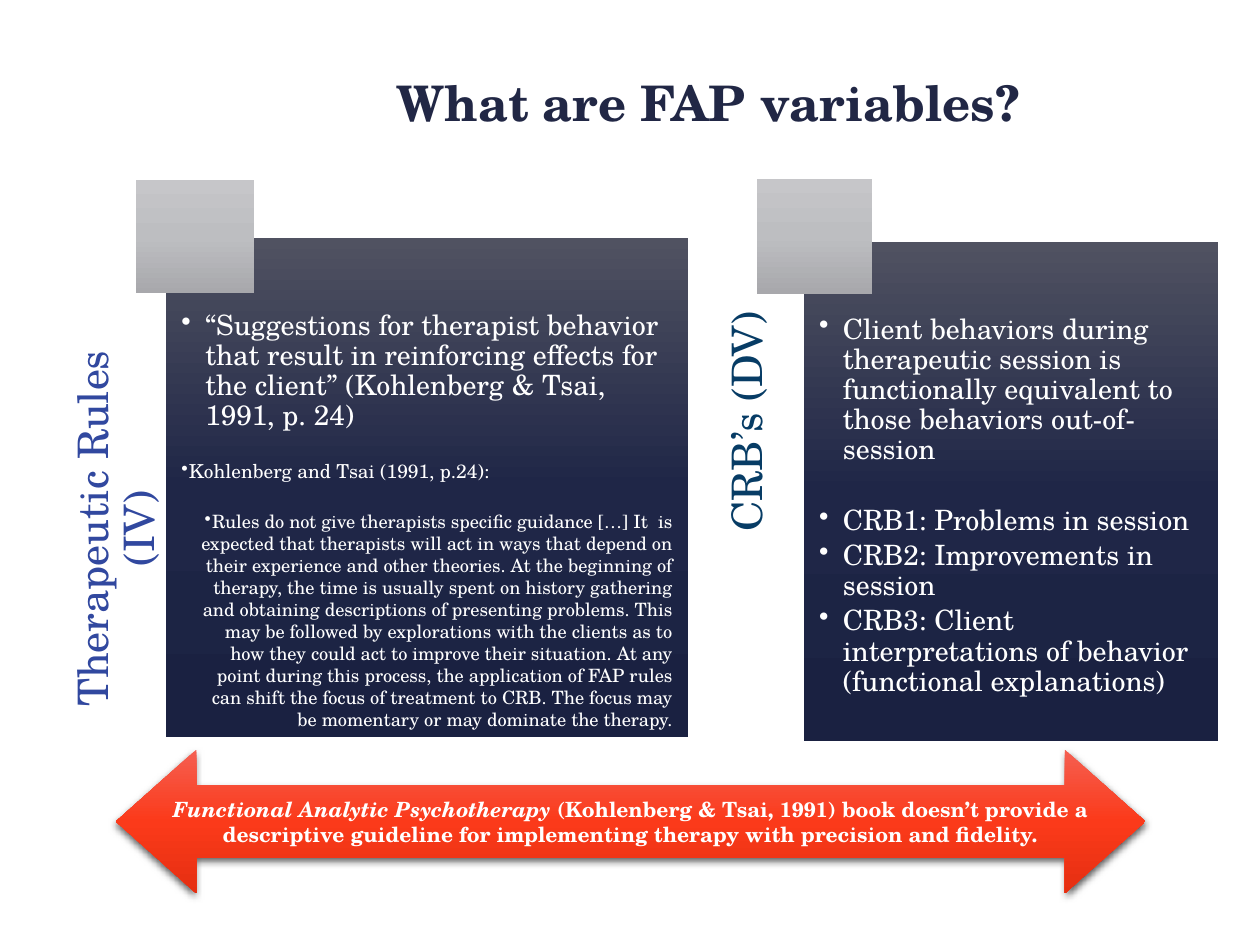
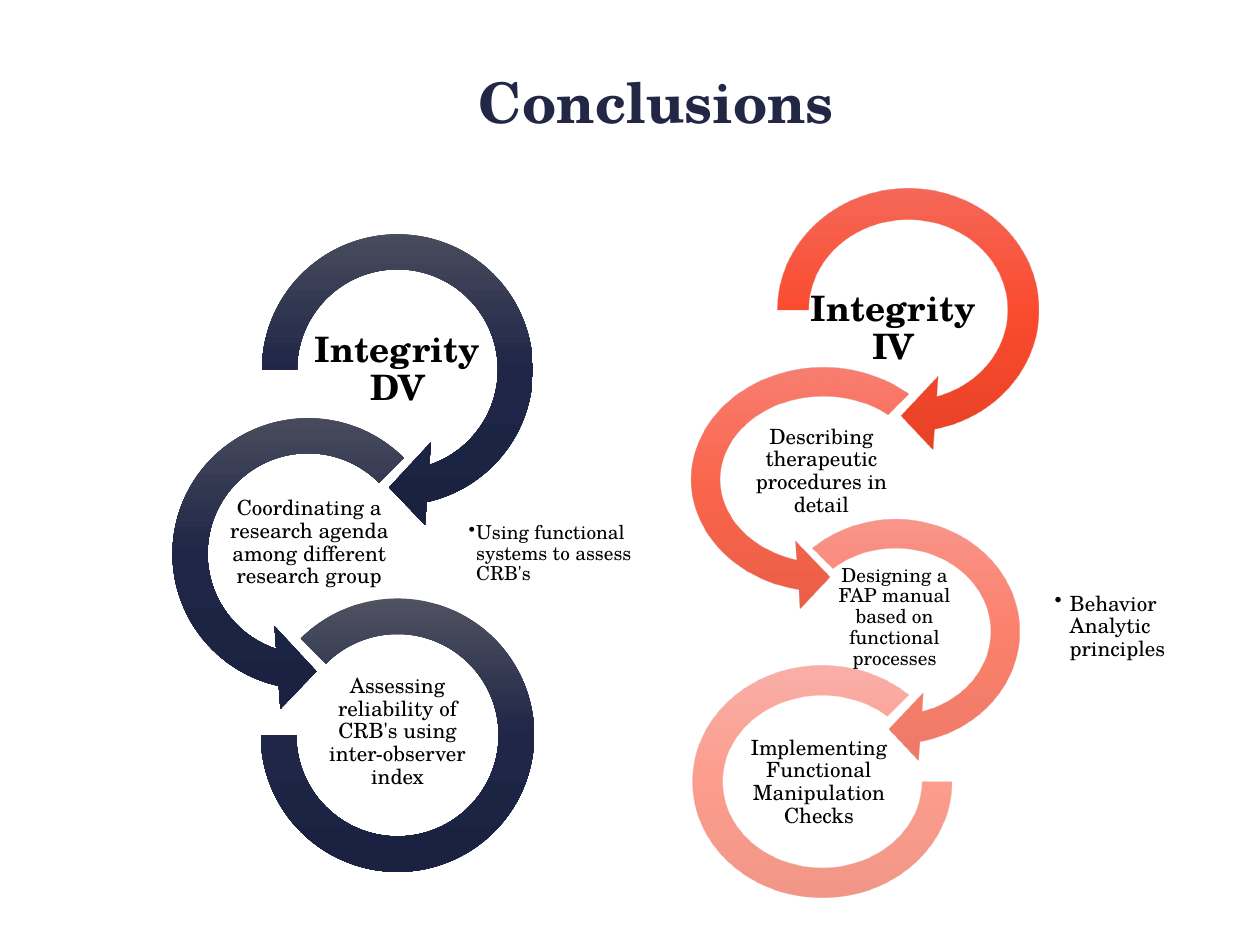
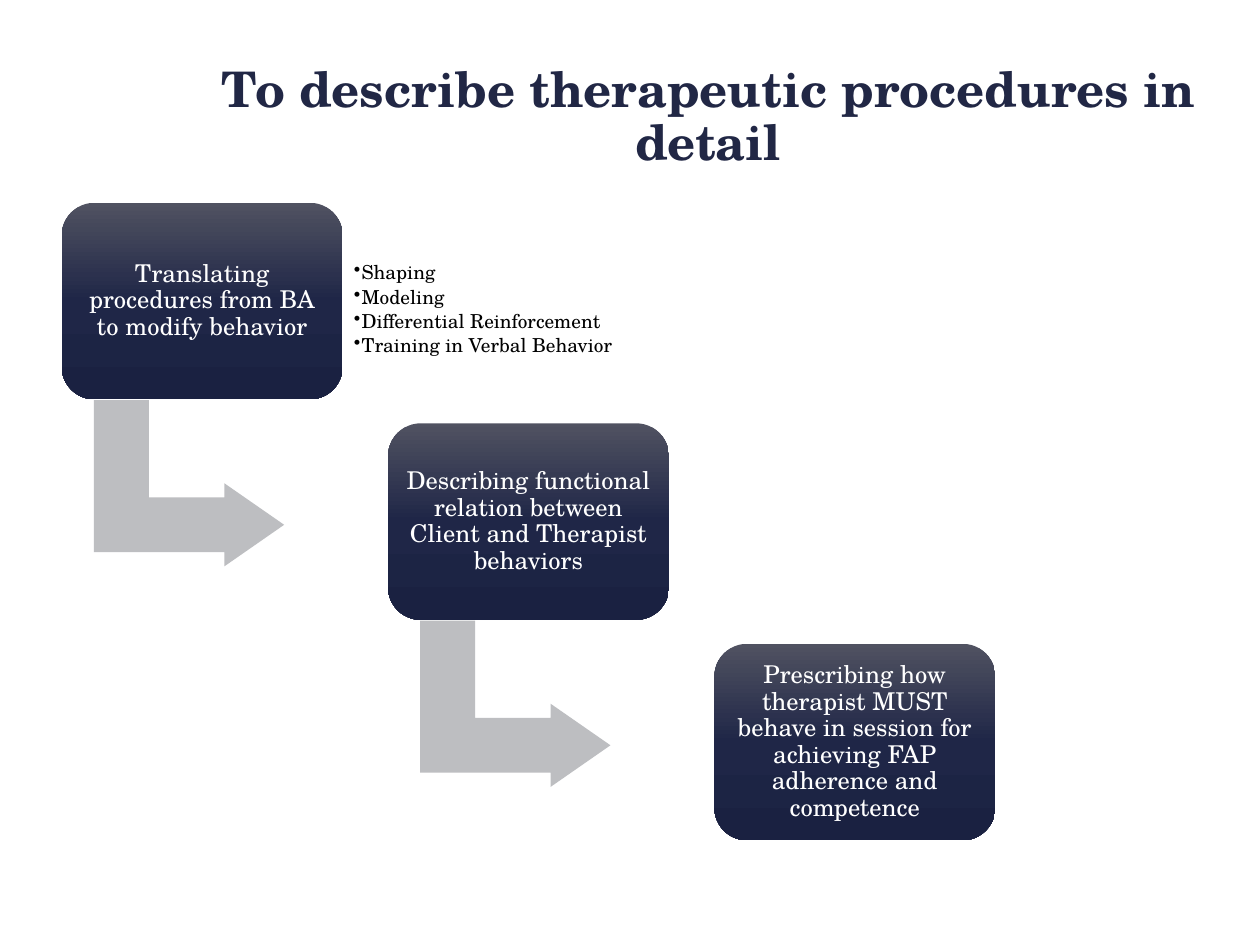
from dataclasses import dataclass

from lxml.etree import SubElement
from pptx import Presentation
from pptx.dml.color import RGBColor
from pptx.enum.shapes import MSO_SHAPE as Kind
from pptx.enum.text import MSO_ANCHOR as Anchor, PP_ALIGN as Align
from pptx.oxml.ns import qn
from pptx.util import Emu, Pt

SCALE = 9144  # EMU in one px, 100 px to the inch


@dataclass(frozen=True)
class Theme:
    font: str = "TeX Gyre Schola"
    ink: str = "212745"
    black: str = "000000"
    white: str = "FFFFFF"
    blue: str = "31489F"
    teal: str = "073C65"
    gray: str = "BDBEC1"
    navy: tuple = ("505261", "1F2647", "1A2141")
    silver: tuple = ("C6C6C9", "BDBEC1", "A8A8AC")
    red: tuple = ("F55F51", "FB3A1A", "E52F11")
    title: int = 28
    large: int = 32
    side: int = 24
    head: int = 20
    body: int = 16
    card: int = 14
    label: int = 12
    small: int = 11
    quote: float = 10.5


@dataclass
class Para:
    """One paragraph; lead is an italic opening, indent a hanging bullet."""
    text: str
    size: float
    indent: int = 0
    before: int = 0
    align: Align = Align.CENTER
    line: float = 0.9
    lead: str = ""


def px(n):
    return Emu(n * SCALE)


def bullet(text, size, indent=6, before=0, align=Align.LEFT, line=0.9):
    return Para(text, size, indent, before, align, line)


class Deck:
    def __init__(self, theme):
        self.theme = theme
        self.prs = Presentation()
        self.prs.slide_width, self.prs.slide_height = px(1000), px(750)
        self.slide = None

    def page(self, title, x, y, size):
        self.slide = self.prs.slides.add_slide(self.prs.slide_layouts[6])
        self.text((x, y, 808, 83), [Para(title, size)], self.theme.ink,
                  bold=True, inset=(10, 5, 10, 5))

    def label(self, shape, paras, color, bold=False, anchor=Anchor.MIDDLE,
              inset=(1, 1, 1, 1)):
        frame = shape.text_frame
        frame.word_wrap = True
        frame.vertical_anchor = anchor
        (frame.margin_left, frame.margin_top,
         frame.margin_right, frame.margin_bottom) = map(px, inset)
        for i, para in enumerate(paras):
            p = frame.add_paragraph() if i else frame.paragraphs[0]
            p.text = para.lead or para.text
            if para.lead:
                p.add_run().text = para.text
                p.runs[0].font.italic = True
            if para.indent:
                self.dot(p, para)
            p.alignment, p.line_spacing = para.align, para.line
            if para.before:
                p.space_before = Pt(para.before)
            for run in p.runs:
                font = run.font
                font.name, font.size = self.theme.font, Pt(para.size)
                font.bold = bold
                font.color.rgb = RGBColor.from_string(color)

    def dot(self, p, para):
        """Give a paragraph a hanging bullet and its gap below."""
        props = p._p.get_or_add_pPr()
        props.set("marL", str(px(para.indent)))
        props.set("indent", str(-px(para.indent)))
        SubElement(props, qn("a:buChar"), char="•")
        p.space_after = Pt(para.size * 0.18)

    def text(self, box, paras, color, turn=0, **style):
        shape = self.slide.shapes.add_textbox(*map(px, box))
        shape.rotation = turn
        self.label(shape, paras, color, **style)

    def shape(self, kind, box, fill, adj=(), alpha=100, turn=0):
        shape = self.slide.shapes.add_shape(kind, *map(px, box))
        shape.shadow.inherit = False
        shape.line.fill.background()
        shape.rotation = turn
        for i, value in enumerate(adj):
            shape.adjustments[i] = value
        if isinstance(fill, tuple):
            self.blend(shape, fill, alpha)
        else:
            shape.fill.solid()
            shape.fill.fore_color.rgb = RGBColor.from_string(fill)
        return shape

    def blend(self, shape, colors, alpha):
        """Fill from top to bottom with three colours."""
        shape.fill.gradient()
        shape.fill.gradient_angle = 270
        stops = shape._element.spPr.find(qn("a:gradFill")).find(qn("a:gsLst"))
        for stop in list(stops):
            stops.remove(stop)
        for i, color in enumerate(colors):
            stop = SubElement(stops, qn("a:gs"), pos=str(i * 50000))
            rgb = SubElement(stop, qn("a:srgbClr"), val=color)
            if alpha < 100:
                SubElement(rgb, qn("a:alpha"), val=str(alpha * 1000))

    def shade(self, shape):
        """Drop a soft shadow straight down."""
        effects = shape._element.spPr.find(qn("a:effectLst"))
        outer = SubElement(effects, qn("a:outerShdw"), blurRad=str(Pt(4.5)),
                           dist=str(Pt(1.5)), dir="5400000", rotWithShape="0")
        rgb = SubElement(outer, qn("a:srgbClr"), val=self.theme.black)
        SubElement(rgb, qn("a:alpha"), val="63000")

    def panel(self, box, tab, paras):
        shape = self.shape(Kind.RECTANGLE, box, self.theme.navy)
        self.label(shape, paras, self.theme.white, anchor=Anchor.TOP,
                   inset=(12, 58, 12, 12))
        self.shape(Kind.RECTANGLE, tab, self.theme.silver)

    def side(self, box, text, color, align):
        self.text(box, [Para(text, self.theme.side, align=align)], color,
                  turn=270, anchor=Anchor.TOP, inset=(0, 0, 58, 0))


def variables(deck):
    t = deck.theme
    deck.page("What are FAP variables?", 158, 42, t.title)
    deck.side((-94, 344, 396, 93), "Therapeutic Rules (IV)", t.blue, Align.CENTER)
    deck.panel((132, 189, 414, 396), (108, 143, 94, 90), [
        bullet("“Suggestions for therapist behavior that result in reinforcing "
               "effects for the client” (Kohlenberg & Tsai, 1991, p. 24)",
               t.body, 19),
        bullet("Kohlenberg and Tsai (1991, p.24):", t.small, before=14),
        bullet("Rules do not give therapists specific guidance […] It  is "
               "expected that therapists will act in ways that depend on their "
               "experience and other theories. At the beginning of therapy, the "
               "time is usually spent on history gathering and obtaining "
               "descriptions of presenting problems. This may be followed by "
               "explorations with the clients as to how they could act to "
               "improve their situation. At any point during this process, the "
               "application of FAP rules can shift the focus of treatment to "
               "CRB. The focus may be momentary or may dominate the therapy.",
               t.quote, before=14, align=Align.RIGHT, line=1.0)])
    deck.side((398, 368, 396, 39), "CRB’s (DV)", t.teal, Align.RIGHT)
    deck.panel((638, 192, 329, 396), (601, 142, 91, 91), [
        bullet("Client behaviors during therapeutic session is functionally "
               "equivalent to those behaviors out-of-session", t.body, 19),
        bullet("CRB1: Problems in session", t.body, 19, before=20),
        bullet("CRB2: Improvements in session", t.body, 19),
        bullet("CRB3: Client interpretations of behavior (functional "
               "explanations)", t.body, 19)])
    arrow = deck.shape(Kind.LEFT_RIGHT_ARROW, (92, 595, 817, 114), t.red,
                       (0.5, 0.56))
    deck.shade(arrow)
    note = Para("(Kohlenberg & Tsai, 1991) book doesn’t provide a descriptive "
                "guideline for implementing therapy with precision and fidelity.",
                t.label, line=1.0, lead="Functional Analytic Psychotherapy ")
    deck.label(arrow, [note], t.white, bold=True, inset=(10, 5, 10, 5))


def conclusions(deck):
    t = deck.theme
    right, left, arc = Kind.CIRCULAR_ARROW, Kind.LEFT_CIRCULAR_ARROW, Kind.BLOCK_ARC
    first = (0.11, 11.42, 45, 108, 0.13)
    back = (0.11, 11.42, 63, 189, 0.13)
    onward = (0.11, 11.42, 45, 135, 0.13)
    deck.page("Conclusions", 117, 42, t.large)
    rings = [
        (right, (189, 167, 253, 253), t.navy, first, 100),
        (left, (118, 313, 253, 253), t.navy, back, 100),
        (arc, (207, 475, 217, 217), t.navy, (135, 108, 0.13), 100),
        (right, (600, 133, 241, 226), t.red, first, 90),
        (left, (533, 276, 240, 209), t.red, back, 77),
        (right, (597, 397, 228, 209), t.red, onward, 63),
        (arc, (550, 528, 205, 184), t.red, (0, 189, 0.13), 50),
    ]
    for ring in rings:
        deck.shape(*ring)
    labels = [
        ((245, 259, 141, 70), "Integrity DV", t.head),
        ((175, 396, 141, 70), "Coordinating a research agenda among different "
                              "research group", t.label),
        ((245, 546, 141, 70), "Assessing reliability of CRB's using "
                              "inter-observer index", t.label),
        ((634, 232, 150, 58), "Integrity IV", t.head),
        ((594, 345, 116, 58), "Describing therapeutic procedures in detail",
         t.label),
        ((652, 461, 116, 58), "Designing a FAP manual based on functional "
                              "processes", t.small),
        ((592, 592, 116, 58), "Implementing Functional Manipulation Checks",
         t.label),
    ]
    for box, text, size in labels:
        deck.text(box, [Para(text, size)], t.black, bold=size == t.head)
    deck.text((371, 389, 152, 101),
              [bullet("Using functional systems to assess CRB's", t.small)],
              t.black)
    deck.text((836, 433, 130, 129),
              [bullet("Behavior Analytic principles", t.label, 12)], t.black)


def procedures(deck):
    t = deck.theme
    deck.page("To describe therapeutic procedures in detail", 158, 52, t.title)
    steps = [
        "Translating procedures from BA to modify behavior",
        "Describing functional relation between Client and Therapist behaviors",
        "Prescribing how therapist MUST behave in session for achieving FAP "
        "adherence and competence",
    ]
    pad = (6, 6, 6, 6)
    for i, step in enumerate(steps):
        x, y = 49 + 259 * i, 161 + 175 * i
        if i < len(steps) - 1:
            deck.shape(Kind.BENT_UP_ARROW, (x + 35, y + 147, 132, 151), t.gray,
                       (0.33, 0.25, 0.36), turn=90)
        card = deck.shape(Kind.ROUNDED_RECTANGLE, (x, y, 223, 156), t.navy)
        deck.label(card, [Para(step, t.card)], t.white, inset=pad)
    skills = ("Shaping", "Modeling", "Differential Reinforcement",
              "Training in Verbal Behavior")
    deck.text((275, 183, 470, 126), [bullet(s, t.small) for s in skills],
              t.black, inset=pad)


def main():
    deck = Deck(Theme())
    for build in (variables, conclusions, procedures):
        build(deck)
    deck.prs.save("out.pptx")


if __name__ == "__main__":
    main()
